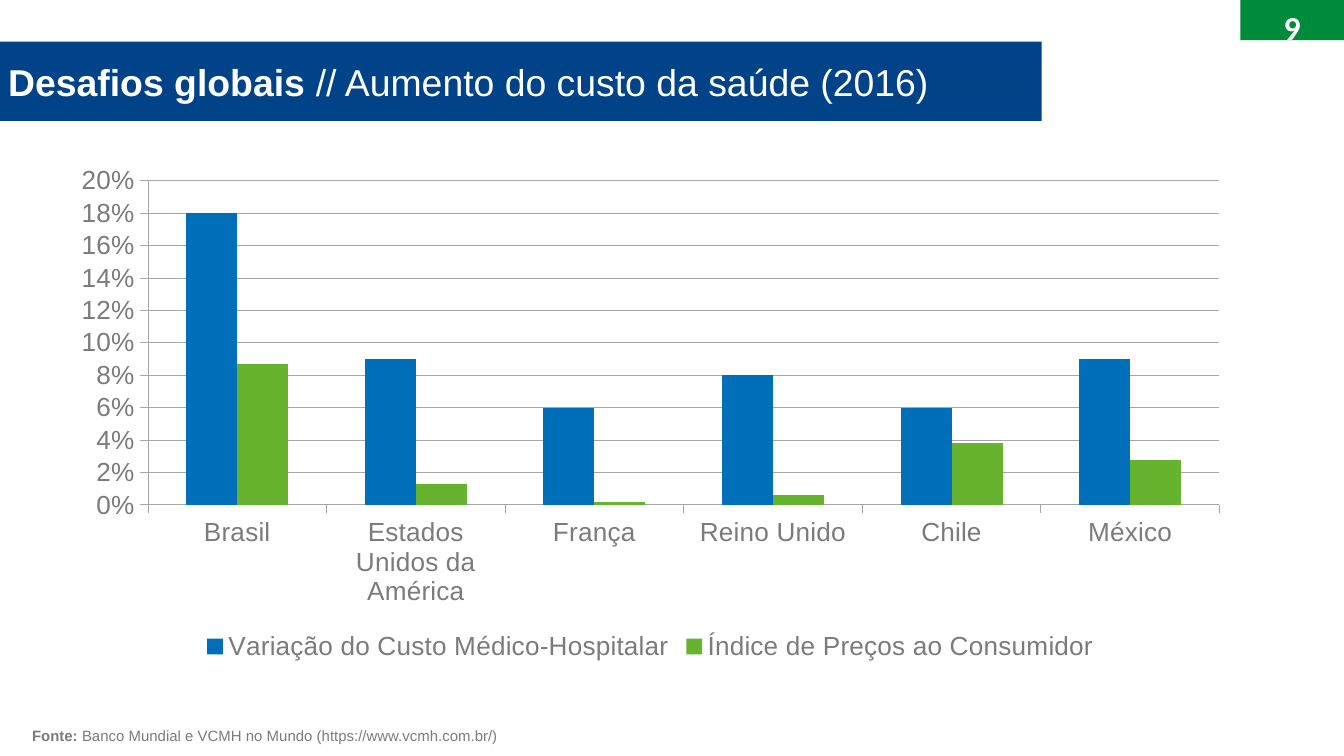
from pptx import Presentation
from pptx.chart.data import CategoryChartData
from pptx.dml.color import RGBColor
from pptx.enum.chart import XL_CHART_TYPE, XL_LEGEND_POSITION, XL_TICK_MARK
from pptx.enum.shapes import MSO_SHAPE
from pptx.enum.text import MSO_ANCHOR, MSO_AUTO_SIZE, PP_ALIGN
from pptx.util import Inches, Pt

WHITE = RGBColor(0xFF, 0xFF, 0xFF)
GREEN = RGBColor(0x00, 0x8B, 0x3A)
NAVY = RGBColor(0x00, 0x43, 0x89)
GRAY = RGBColor(0x7B, 0x7B, 0x7B)
LINE_GRAY = RGBColor(0xA6, 0xA6, 0xA6)
COST_BLUE = RGBColor(0x00, 0x6F, 0xB9)
PRICE_GREEN = RGBColor(0x65, 0xB3, 0x2E)

COUNTRIES = ["Brasil", "Estados Unidos da América", "França",
             "Reino Unido", "Chile", "México"]
SERIES = [
    ("Variação do Custo Médico-Hospitalar", COST_BLUE,
     [0.18, 0.09, 0.06, 0.08, 0.06, 0.09]),
    ("Índice de Preços ao Consumidor", PRICE_GREEN,
     [0.087, 0.013, 0.002, 0.006, 0.038, 0.028]),
]


def style_font(font, size, color, name="Arial"):
    font.name = name
    font.size = Pt(size)
    font.color.rgb = color


def style_line(line):
    line.color.rgb = LINE_GRAY
    line.width = Pt(0.5)


def write_lead(frame, lead, rest, size, color):
    para = frame.paragraphs[0]
    para.alignment = PP_ALIGN.LEFT
    for text, bold in ((lead, True), (rest, False)):
        span = para.add_run()
        span.text = text
        span.font.bold = bold
    style_font(para.font, size, color)


def add_page_number(page, left, top, width, height):
    box = page.shapes.add_shape(MSO_SHAPE.RECTANGLE, left, top, width, height)
    box.shadow.inherit = False
    box.fill.solid()
    box.fill.fore_color.rgb = GREEN
    box.line.fill.background()
    frame = box.text_frame
    frame.vertical_anchor = MSO_ANCHOR.TOP
    para = frame.paragraphs[0]
    para.text = "9"
    para.alignment = PP_ALIGN.CENTER
    style_font(para.font, 18, WHITE, "Calibri")
    para.font.bold = True


def place_title(page, left, top, width, height):
    box = page.shapes.title
    box.left, box.top, box.width, box.height = left, top, width, height
    box.fill.solid()
    box.fill.fore_color.rgb = NAVY
    frame = box.text_frame
    frame.auto_size = MSO_AUTO_SIZE.NONE
    frame.vertical_anchor = MSO_ANCHOR.MIDDLE
    frame.margin_left = frame.margin_right = Inches(0.07)
    frame.margin_top = frame.margin_bottom = Inches(0.04)
    write_lead(frame, "Desafios globais ",
               "// Aumento do custo da saúde (2016)", 20, WHITE)


def add_cost_chart(page, left, top, width, height):
    data = CategoryChartData(number_format="0%")
    data.categories = COUNTRIES
    for name, _, values in SERIES:
        data.add_series(name, values)
    chart = page.shapes.add_chart(XL_CHART_TYPE.COLUMN_CLUSTERED,
                                  left, top, width, height, data).chart
    chart.has_title = False
    style_font(chart.font, 10, GRAY, "Calibri")

    plot = chart.plots[0]
    plot.gap_width = 150
    plot.overlap = 0
    plot.vary_by_categories = False
    for series, (_, color, _) in zip(plot.series, SERIES):
        series.format.fill.solid()
        series.format.fill.fore_color.rgb = color

    for axis in (chart.category_axis, chart.value_axis):
        axis.major_tick_mark = XL_TICK_MARK.OUTSIDE
        axis.minor_tick_mark = XL_TICK_MARK.NONE
        style_line(axis.format.line)
        style_font(axis.tick_labels.font, 14, GRAY)

    values_axis = chart.value_axis
    values_axis.minimum_scale = 0
    values_axis.maximum_scale = 0.2
    values_axis.major_unit = 0.02
    values_axis.tick_labels.number_format = "0%"
    values_axis.tick_labels.number_format_is_linked = False
    values_axis.has_major_gridlines = True
    style_line(values_axis.major_gridlines.format.line)

    chart.has_legend = True
    chart.legend.position = XL_LEGEND_POSITION.BOTTOM
    chart.legend.include_in_layout = False
    style_font(chart.legend.font, 14, GRAY)


def add_source(page, left, top, width, height):
    frame = page.shapes.add_textbox(left, top, width, height).text_frame
    frame.word_wrap = True
    frame.auto_size = MSO_AUTO_SIZE.SHAPE_TO_FIT_TEXT
    write_lead(frame, "Fonte: ",
               "Banco Mundial e VCMH no Mundo (https://www.vcmh.com.br/)",
               8, GRAY)


def main():
    deck = Presentation()
    deck.slide_width = Inches(10)
    deck.slide_height = deck.slide_width * 9 // 16
    page = deck.slides.add_slide(deck.slide_layouts[5])
    add_page_number(page, Inches(9.23), Inches(0), Inches(0.77), Inches(0.3))
    place_title(page, Inches(-0.01), Inches(0.31), Inches(7.76), Inches(0.59))
    add_cost_chart(page, Inches(0.43), Inches(1.16), Inches(8.82), Inches(3.8))
    add_source(page, Inches(0.14), Inches(5.36), Inches(8.56), Inches(0.24))
    deck.save("out.pptx")


if __name__ == "__main__":
    main()
